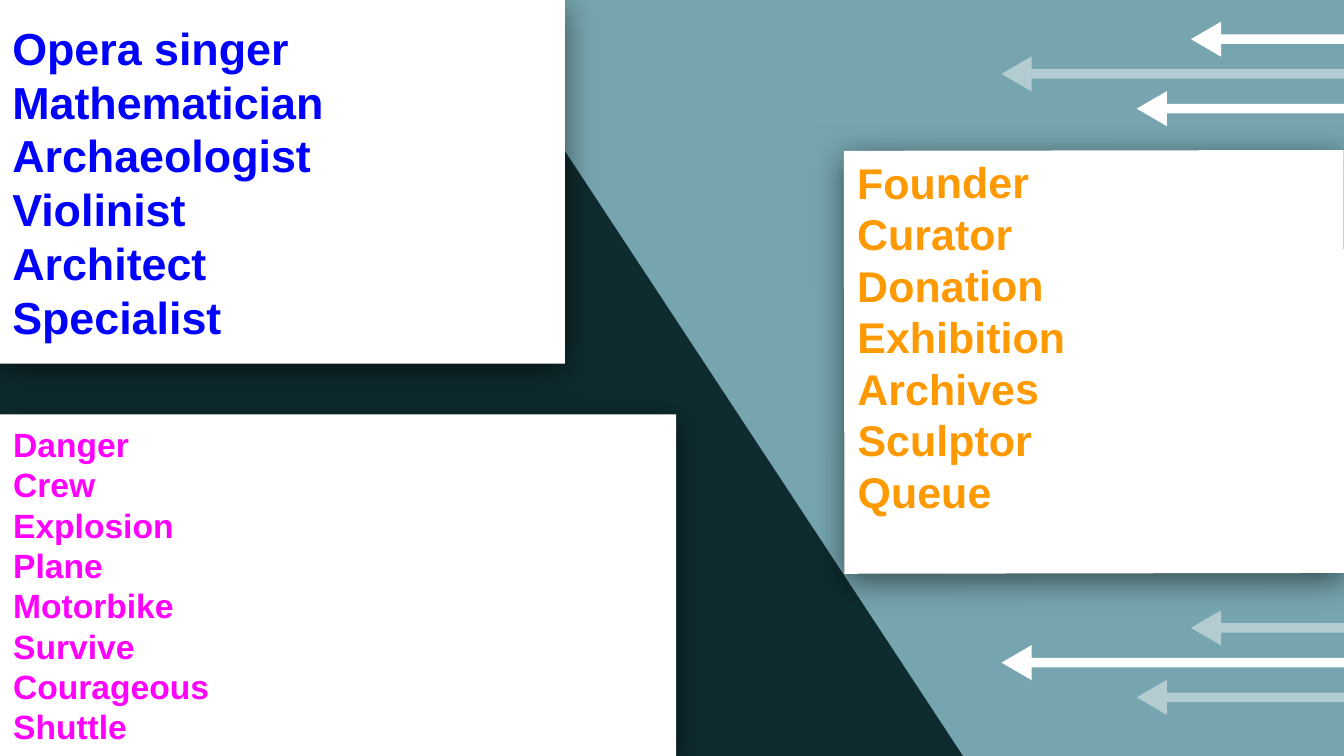
from lxml.etree import SubElement
from pptx import Presentation
from pptx.dml.color import RGBColor
from pptx.enum.shapes import MSO_SHAPE
from pptx.enum.text import MSO_ANCHOR, PP_ALIGN
from pptx.oxml.ns import qn
from pptx.util import Pt

WIDTH, HEIGHT = 720, 405
DARK = RGBColor(0x0E, 0x2B, 0x2F)
TEAL = RGBColor(0x76, 0xA5, 0xAF)
WHITE = RGBColor(0xFF, 0xFF, 0xFF)
BLUE = RGBColor(0x00, 0x00, 0xFF)
MAGENTA = RGBColor(0xFF, 0x00, 0xFF)
ORANGE = RGBColor(0xFF, 0x99, 0x00)

# words, (left, top, width, height), rotation, font size, colour, bottom inset
CARDS = [
    (["Opera singer", "Mathematician", "Archaeologist", "Violinist",
      "Architect", "Specialist"],
     (-0.5, 0, 303.1, 194.8), 0, 24, BLUE, 3.6),
    (["Danger", "Crew", "Explosion", "Plane", "Motorbike", "Survive",
      "Courageous", "Shuttle"],
     (0, 222, 362.2, 183), 0, 18, MAGENTA, 3.6),
    (["Founder", "Curator", "Donation", "Exhibition", "Archives",
      "Sculptor", "Queue"],
     (452.2, 80.6, 267.8, 226.6), -0.1, 23, ORANGE, 31.2),
]
LINE_HEIGHT = 1.2

ARROW_LENGTHS = [82, 183.5, 111]
ARROW_THICKNESS = 18.8
ARROW_PITCH = 18.6
# centre of the first arrow, opacity percent of each arrow
ARROW_GROUPS = [(336.4, [44, 100, 44]), (21, [100, 44, 100])]


def paint(shape, color, opacity=100):
    shape.shadow.inherit = False
    shape.line.fill.background()
    shape.fill.solid()
    shape.fill.fore_color.rgb = color
    if opacity < 100:
        add_alpha(shape.fill._xPr.find(".//" + qn("a:srgbClr")), opacity)


def add_alpha(color_element, percent):
    SubElement(color_element, qn("a:alpha"), val=str(percent * 1000))


def add_soft_shadow(shape):
    effects = shape._element.spPr.find(qn("a:effectLst"))
    shadow = SubElement(effects, qn("a:outerShdw"), blurRad=str(Pt(18)),
                        dist=str(Pt(4)), dir="5400000", algn="bl",
                        rotWithShape="0")
    add_alpha(SubElement(shadow, qn("a:srgbClr"), val="000000"), 55)


def add_card(page, words, place, rotation, size, color, bottom_inset):
    card = page.shapes.add_shape(MSO_SHAPE.RECTANGLE, *map(Pt, place))
    card.rotation = rotation
    paint(card, WHITE)
    add_soft_shadow(card)
    frame = card.text_frame
    frame.word_wrap = True
    frame.vertical_anchor = MSO_ANCHOR.MIDDLE
    frame.margin_bottom = Pt(bottom_inset)
    frame.text = "\n".join(words)
    for para in frame.paragraphs:
        para.alignment = PP_ALIGN.LEFT
        para.line_spacing = Pt(size * LINE_HEIGHT)
        para.font.name = "Arial"
        para.font.size = Pt(size)
        para.font.bold = True
        para.font.color.rgb = color


def add_arrow(page, middle, length, opacity):
    arrow = page.shapes.add_shape(
        MSO_SHAPE.LEFT_ARROW, Pt(WIDTH - length),
        Pt(middle - ARROW_THICKNESS / 2), Pt(length), Pt(ARROW_THICKNESS))
    arrow.adjustments[0] = 0.27
    arrow.adjustments[1] = 0.86
    paint(arrow, WHITE, opacity)


def main():
    deck = Presentation()
    deck.slide_width, deck.slide_height = Pt(WIDTH), Pt(HEIGHT)
    page = deck.slides.add_slide(deck.slide_layouts[6])
    page.background.fill.solid()
    page.background.fill.fore_color.rgb = DARK

    outline = page.shapes.build_freeform(Pt(WIDTH), Pt(HEIGHT))
    outline.add_line_segments([(Pt(WIDTH), Pt(-0.7)), (Pt(249), Pt(-0.7)),
                               (Pt(516), Pt(HEIGHT))])
    paint(outline.convert_to_shape(), TEAL)

    for card in CARDS:
        add_card(page, *card)

    for first_middle, opacities in ARROW_GROUPS:
        for row, (length, opacity) in enumerate(zip(ARROW_LENGTHS, opacities)):
            add_arrow(page, first_middle + row * ARROW_PITCH, length, opacity)

    deck.save("out.pptx")


if __name__ == "__main__":
    main()
